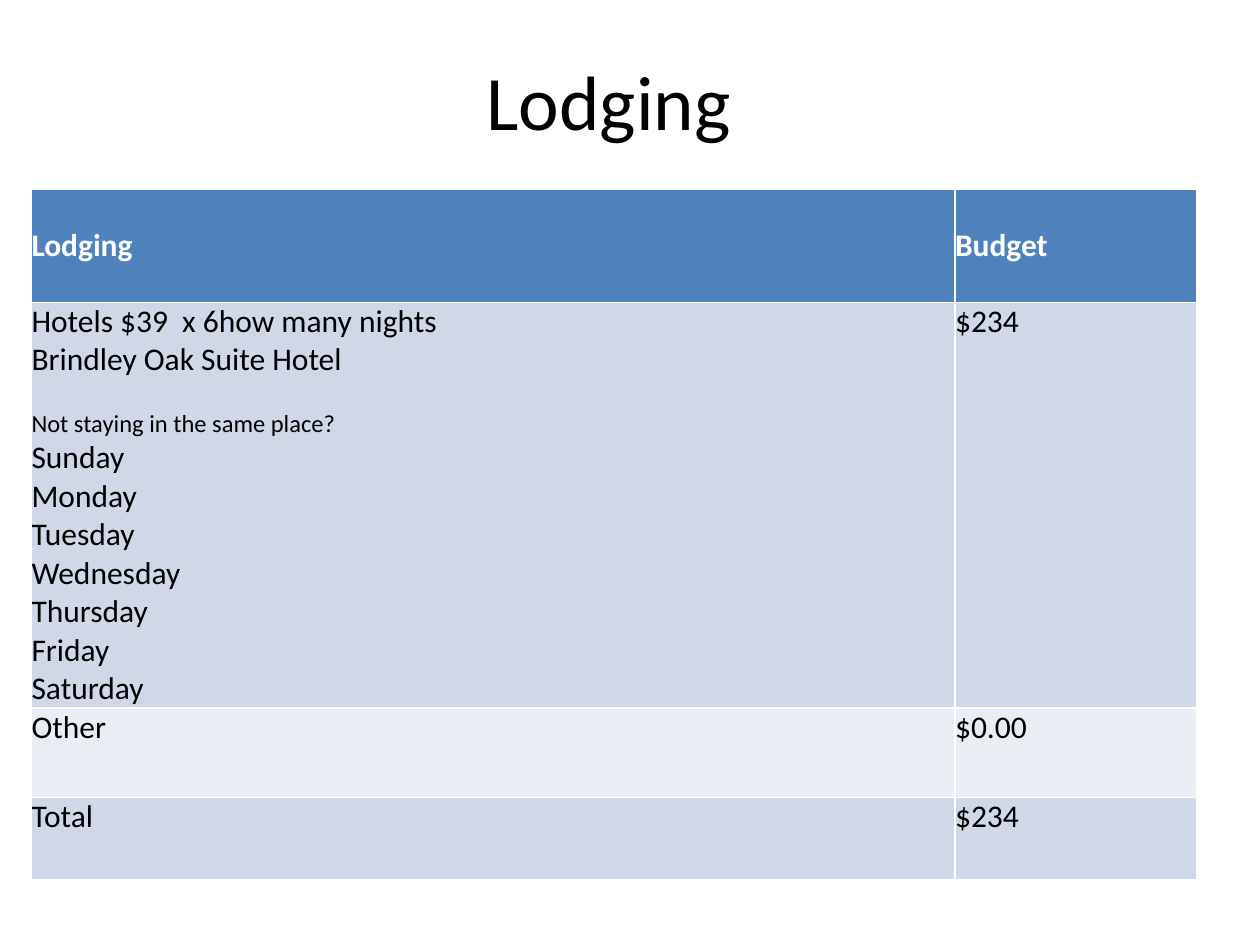
from pptx import Presentation
from pptx.dml.color import RGBColor
from pptx.enum.text import MSO_ANCHOR as Anchor, PP_ALIGN as Align
from pptx.util import Pt

FONT = "Calibri"
BLACK, WHITE = "000000", "FFFFFF"
HEADER_FILL, DARK_BAND, LIGHT_BAND = "4F81BD", "D0D8E8", "E9EDF4"
COLUMN_WIDTHS = (527.76, 138.24)
ROW_HEIGHTS = (64.8, 213.84, 51.12, 46.8)
PLACE_QUESTION = "Not staying in the same place?"
HOTEL_LINES = (
    "Hotels $39  x 6how many nights", "Brindley Oak Suite Hotel",
    PLACE_QUESTION, "Sunday", "Monday", "Tuesday", "Wednesday",
    "Thursday", "Friday", "Saturday",
)
BUDGET_ROWS = (
    ("Lodging", "Budget"),
    ("\n".join(HOTEL_LINES), "$234"),
    ("Other", "$0.00"),
    ("Total", "$234"),
)


def rgb(value):
    """Turn a hex string into a colour."""
    return RGBColor.from_string(value)


def style_paragraph(paragraph, size, color, bold=False):
    """Format every run of a paragraph."""
    for run in paragraph.runs:
        run.font.name = FONT
        run.font.size = Pt(size)
        run.font.bold = bold
        run.font.color.rgb = rgb(color)


def place_title(slide, left, top, width, height):
    """Put the heading in the title placeholder."""
    title = slide.shapes.title
    title.left, title.top = Pt(left), Pt(top)
    title.width, title.height = Pt(width), Pt(height)
    title.text_frame.text = "Lodging"
    title.text_frame.vertical_anchor = Anchor.MIDDLE
    heading = title.text_frame.paragraphs[0]
    heading.alignment = Align.CENTER
    style_paragraph(heading, 44, BLACK)


def fill_cell(cell, text, fill, color, is_header):
    """Write and format one budget cell."""
    cell.margin_left = cell.margin_right = cell.margin_top = cell.margin_bottom = 0
    cell.vertical_anchor = Anchor.MIDDLE if is_header else Anchor.TOP
    cell.fill.solid()
    cell.fill.fore_color.rgb = rgb(fill)
    cell.text_frame.text = text
    for line in cell.text_frame.paragraphs:
        is_question = line.text == PLACE_QUESTION
        style_paragraph(line, 14 if is_question else 18, color, is_header)
        if is_question:
            line.space_before = Pt(17)


def place_budget(slide, left, top):
    """Build the budget table from its top left corner."""
    frame = slide.shapes.add_table(
        len(ROW_HEIGHTS), len(COLUMN_WIDTHS), Pt(left), Pt(top),
        Pt(sum(COLUMN_WIDTHS)), Pt(sum(ROW_HEIGHTS)))
    budget = frame.table
    for column, width in zip(budget.columns, COLUMN_WIDTHS):
        column.width = Pt(width)
    for index, (row, height) in enumerate(zip(budget.rows, ROW_HEIGHTS)):
        row.height = Pt(height)
        is_header = index == 0
        band = DARK_BAND if index % 2 else LIGHT_BAND
        fill = HEADER_FILL if is_header else band
        color = WHITE if is_header else BLACK
        for cell, text in zip(row.cells, BUDGET_ROWS[index]):
            fill_cell(cell, text, fill, color, is_header)


def main():
    """Build and save the lodging slide."""
    deck = Presentation()
    deck.slide_width, deck.slide_height = Pt(720), Pt(540)
    slide = deck.slides.add_slide(deck.slide_layouts[5])
    place_title(slide, 23.76, 12.24, 648, 90)
    place_budget(slide, 18, 108)
    deck.save("out.pptx")


if __name__ == "__main__":
    main()
